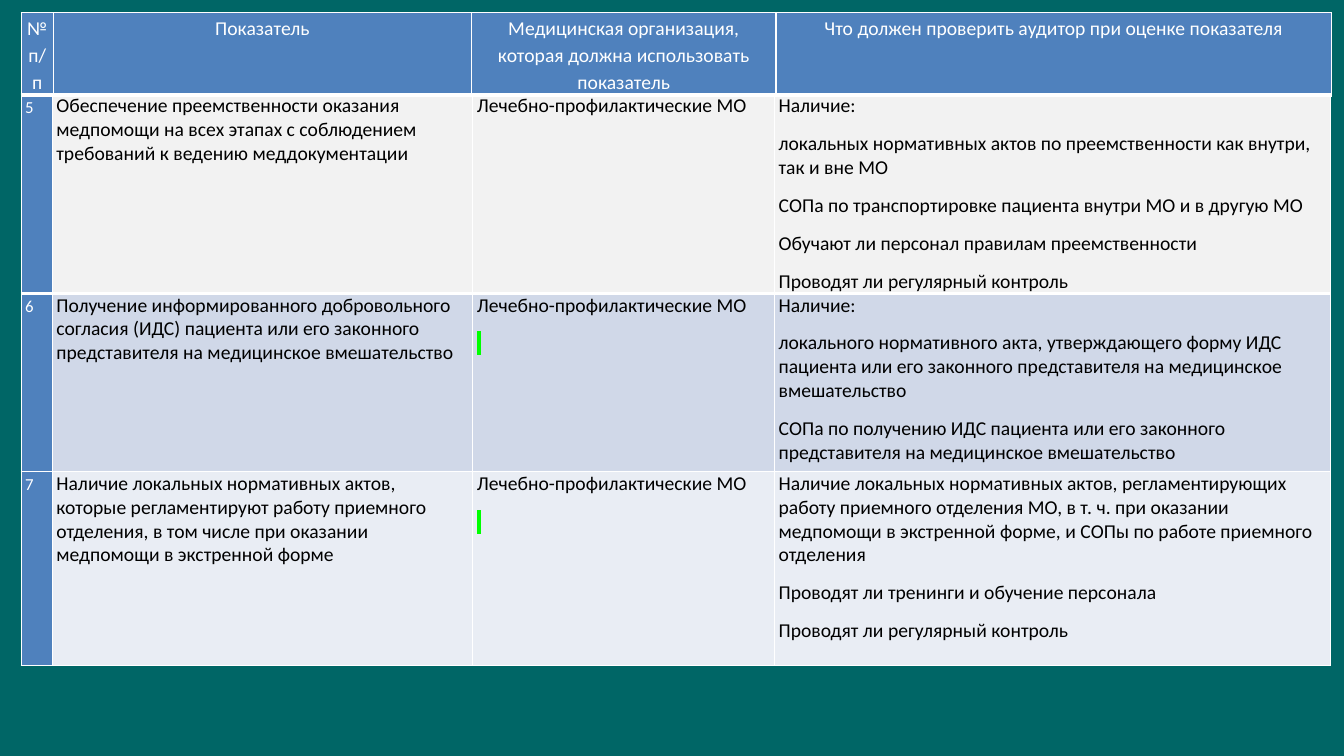
"""Builds a slide with a table of audit indicators for medical organisations."""
import dataclasses

import lxml.etree
import pptx
import pptx.dml.color
import pptx.enum.text
import pptx.oxml.ns
import pptx.util

Pt = pptx.util.Pt
qn = pptx.oxml.ns.qn


@dataclasses.dataclass(frozen=True)
class Theme:
    font: str = "Calibri"
    background: str = "006666"
    accent: str = "4F81BD"
    light: str = "FFFFFF"
    dark: str = "000000"
    mark: str = "00FF00"
    bands: tuple = ("F2F2F2", "D0D8E8", "E9EDF4")
    text_size: int = 14
    number_size: int = 12
    loose: float = 1.15
    space_after: int = 10
    thin: int = 1
    thick: int = 3


class Deck:
    def __init__(self, theme):
        self.theme = theme
        self.prs = pptx.Presentation()
        self.prs.slide_width, self.prs.slide_height = Pt(960), Pt(540)
        self.slide = self.prs.slides.add_slide(self.prs.slide_layouts[6])
        fill = self.slide.background.fill
        fill.solid()
        fill.fore_color.rgb = self.rgb(theme.background)

    def rgb(self, value):
        return pptx.dml.color.RGBColor.from_string(value)

    def table(self, left, top, widths, heights):
        frame = self.slide.shapes.add_table(
            len(heights), len(widths), Pt(left), Pt(top), Pt(sum(widths)), Pt(sum(heights)))
        table = frame.table
        table.first_row = table.horz_banding = False
        for column, width in zip(table.columns, widths):
            column.width = Pt(width)
        for row, height in zip(table.rows, heights):
            row.height = Pt(height)
        return table

    def border(self, cell, bottom):
        tcPr = cell._tc.get_or_add_tcPr()
        for i, side in enumerate("LRTB"):
            width = bottom if side == "B" else self.theme.thin
            ln = lxml.etree.Element(qn(f"a:ln{side}"), w=str(Pt(width)))
            solid = lxml.etree.SubElement(ln, qn("a:solidFill"))
            lxml.etree.SubElement(solid, qn("a:srgbClr"), val=self.theme.light)
            tcPr.insert(i, ln)

    def highlight(self, r):
        mark = lxml.etree.SubElement(r._r.get_or_add_rPr(), qn("a:highlight"))
        lxml.etree.SubElement(mark, qn("a:srgbClr"), val=self.theme.mark)

    def cell(self, cell, text, fill, color, size, margin, bottom, spacing=None, align=None):
        cell.fill.solid()
        cell.fill.fore_color.rgb = self.rgb(fill)
        self.border(cell, bottom)
        cell.margin_left = cell.margin_right = Pt(margin)
        cell.margin_top = cell.margin_bottom = 0
        cell.text_frame.text = text
        for p in cell.text_frame.paragraphs:
            p.space_after = Pt(self.theme.space_after)
            p.line_spacing = spacing
            p.alignment = align
            for r in p.runs:
                r.font.size = Pt(size)
                r.font.color.rgb = self.rgb(color)
                if r.text == MARK:
                    self.highlight(r)
                r.font.name = self.theme.font

    def header(self, table, titles):
        t = self.theme
        for cell, title in zip(table.rows[0].cells, titles):
            self.cell(cell, title, t.accent, t.light, t.text_size, 2.2, t.thick,
                      t.loose, pptx.enum.text.PP_ALIGN.CENTER)

    def body(self, table, records):
        t = self.theme
        for i, (row, record, band) in enumerate(zip(table.rows, records, t.bands)):
            bottom = t.thin if i else t.thick
            number, *cells = row.cells
            self.cell(number, record[0], t.accent, t.light, t.number_size, 2.9, bottom, t.loose)
            for cell, text in zip(cells, record[1:]):
                self.cell(cell, text, band, t.dark, t.text_size, 2.9, bottom)


MARK = " "
TITLES = (
    "№ п/п",
    "Показатель",
    "Медицинская организация, которая должна использовать показатель",
    "Что должен проверить аудитор при оценке показателя",
)
ORGANISATION = "Лечебно-профилактические МО"
CONTROL = "Проводят ли регулярный контроль"
RECORDS = (
    ("5",
     "Обеспечение преемственности оказания медпомощи на всех этапах с соблюдением "
     "требований к ведению меддокументации",
     ORGANISATION,
     "Наличие:\n"
     "локальных нормативных актов по преемственности как внутри, так и вне МО\n"
     "СОПа по транспортировке пациента внутри МО и в другую МО\n"
     "Обучают ли персонал правилам преемственности\n" + CONTROL),
    ("6",
     "Получение информированного добровольного согласия (ИДС) пациента или его "
     "законного представителя на медицинское вмешательство",
     f"{ORGANISATION}\n{MARK}",
     "Наличие:\n"
     "локального нормативного акта, утверждающего форму ИДС пациента или его "
     "законного представителя на медицинское вмешательство\n"
     "СОПа по получению ИДС пациента или его законного представителя "
     "на медицинское вмешательство"),
    ("7",
     "Наличие локальных нормативных актов, которые регламентируют работу приемного "
     "отделения, в том числе при оказании медпомощи в экстренной форме",
     f"{ORGANISATION}\n{MARK}",
     "Наличие локальных нормативных актов, регламентирующих работу приемного "
     "отделения МО, в т. ч. при оказании медпомощи в экстренной форме, "
     "и СОПы по работе приемного отделения\n"
     "Проводят ли тренинги и обучение персонала\n" + CONTROL),
)


def main():
    deck = Deck(Theme())
    body = deck.table(15.1, 67.3, (22.3, 300.4, 215.5, 397), (128.9, 127.4, 138.2))
    deck.body(body, RECORDS)
    header = deck.table(15.1, 9.2, (23, 298.8, 217.4, 396.7), (45.4,))
    deck.header(header, TITLES)
    deck.prs.save("out.pptx")


if __name__ == "__main__":
    main()
